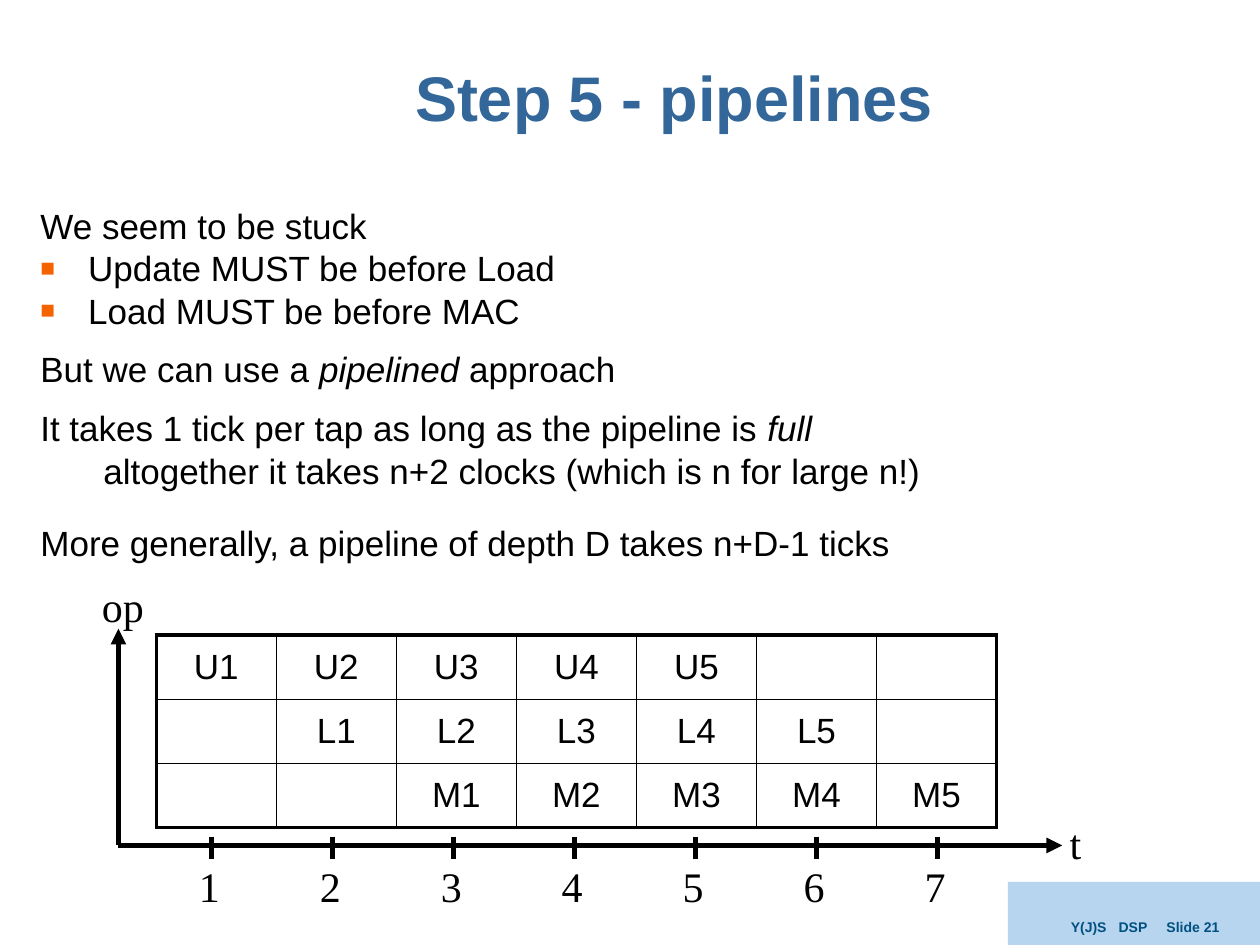
from lxml.etree import SubElement
from pptx import Presentation
from pptx.dml.color import RGBColor
from pptx.enum.shapes import MSO_CONNECTOR
from pptx.enum.text import MSO_ANCHOR, MSO_AUTO_SIZE, PP_ALIGN
from pptx.oxml import parse_xml
from pptx.oxml.ns import nsdecls, qn
from pptx.util import Inches, Pt

COLORS = {"title": "336699", "text": "000000", "bullet": "F46300",
          "tab": "B7D5EF", "footer": "005081"}
SANS, SERIF = "Arial", "Times New Roman"

OPS, TAPS = "ULM", 5
COLS, ROWS = TAPS + len(OPS) - 1, len(OPS)
GRID_X, GRID_Y, GRID_W, GRID_H = 1.24, 5.04, 6.67, 1.53
AXIS_X, AXIS_Y = 0.94, 6.71
TICK_X, TICK_STEP, TICK_H = 1.68, 0.96, 0.18

# Runs of each body paragraph (italic marked by *), space before, and kind
BODY = [
    (["We seem to be stuck"], 7, "plain"),
    (["Update MUST be before Load"], 5, "bullet"),
    (["Load MUST be before MAC"], 5, "bullet"),
    (["But we can use a ", "*pipelined", " approach"], 9.6, "plain"),
    (["It takes 1 tick per tap as long as the pipeline is ", "*full"], 9.6, "plain"),
    (["altogether it takes n+2 clocks (which is n for large n!)"], 5, "sub"),
    (["More generally, a pipeline of depth D takes n+D-1 ticks"], 17.6, "plain"),
]


def rgb(name):
    return RGBColor.from_string(COLORS[name])


def box(*lengths):
    return [Inches(v) for v in lengths]


def add_text(p, text, font=SANS, size=20, color="text", bold=False,
             italic=False, align=None):
    """Append a formatted run to paragraph p."""
    r = p.add_run()
    r.text = text
    r.font.name, r.font.size = font, Pt(size)
    r.font.bold, r.font.italic = bold, italic
    r.font.color.rgb = rgb(color)
    if align is not None:
        p.alignment = align


def add_label(s, text, x, y, w, h=0.5, **fmt):
    tf = s.shapes.add_textbox(*box(x, y, w, h)).text_frame
    tf.word_wrap = True
    add_text(tf.paragraphs[0], text, **fmt)
    return tf


def add_line(s, x1, y1, x2, y2, arrow=False):
    line = s.shapes.add_connector(MSO_CONNECTOR.STRAIGHT, *box(x1, y1, x2, y2))
    line.line.color.rgb, line.line.width = rgb("text"), Pt(3)
    if arrow:
        SubElement(line.line._get_or_add_ln(), qn("a:tailEnd"), type="triangle")
    SubElement(line._element.spPr, qn("a:effectLst"))


def place(sp, *lengths):
    sp.left, sp.top, sp.width, sp.height = box(*lengths)
    tf = sp.text_frame
    tf.auto_size, tf.word_wrap = MSO_AUTO_SIZE.NONE, True
    return tf


def add_title(s):
    tf = place(s.shapes.title, 0.99, 0.18, 8.72, 1.25)
    tf.vertical_anchor = MSO_ANCHOR.MIDDLE
    p = tf.paragraphs[0]
    p.line_spacing = 0.9
    add_text(p, "Step 5 - pipelines", size=36, color="title", bold=True,
             align=PP_ALIGN.CENTER)


def set_bullet(p, kind):
    """Set the indents and the square bullet, or none, of a body paragraph."""
    left, hang = (0.81, 0.31) if kind == "sub" else (0.38, 0.38)
    pPr = p._p.get_or_add_pPr()
    pPr.set("marL", str(Inches(left)))
    pPr.set("indent", str(-Inches(hang)))
    if kind != "bullet":
        SubElement(pPr, qn("a:buNone"))
        return
    color = SubElement(pPr, qn("a:buClr"))
    SubElement(color, qn("a:srgbClr"), val=COLORS["bullet"])
    SubElement(pPr, qn("a:buSzPct"), val="70000")
    SubElement(pPr, qn("a:buFont"), typeface=SANS)
    SubElement(pPr, qn("a:buChar"), char="■")


def add_body(s):
    tf = place(s.placeholders[1], 0.22, 1.57, 9.03, 3.01)
    for i, (runs, before, kind) in enumerate(BODY):
        p = tf.add_paragraph() if i else tf.paragraphs[0]
        p.level = 1 if kind == "sub" else 0
        p.line_spacing = 1.0 if kind == "plain" else 0.8
        p.space_before = Pt(before)
        set_bullet(p, kind)
        for text in runs:
            add_text(p, text.lstrip("*"), italic=text.startswith("*"))


def set_borders(cell, row, col):
    """Draw thin inner borders and a thick outer frame."""
    outer = {"L": col == 0, "R": col == COLS - 1,
             "T": row == 0, "B": row == ROWS - 1}
    tcPr = cell._tc.get_or_add_tcPr()
    for i, (side, thick) in enumerate(outer.items()):
        tcPr.insert(i, parse_xml(
            f'<a:ln{side} {nsdecls("a")} w="{Pt(2.25 if thick else 1)}">'
            f'<a:solidFill><a:srgbClr val="{COLORS["text"]}"/></a:solidFill>'
            f'</a:ln{side}>'))


def add_schedule(s):
    """Each operation starts one tick after the operation above it."""
    table = s.shapes.add_table(ROWS, COLS,
                               *box(GRID_X, GRID_Y, GRID_W, GRID_H)).table
    table.first_row = table.horz_banding = False
    for row, op in enumerate(OPS):
        for col in range(COLS):
            cell = table.cell(row, col)
            cell.fill.background()
            cell.vertical_anchor = MSO_ANCHOR.MIDDLE
            set_borders(cell, row, col)
            tap = col - row + 1
            if 1 <= tap <= TAPS:
                add_text(cell.text_frame.paragraphs[0], f"{op}{tap}",
                         align=PP_ALIGN.CENTER)


def add_axes(s):
    fmt = {"font": SERIF, "size": 24}
    add_line(s, AXIS_X, AXIS_Y, 8.43, AXIS_Y, arrow=True)
    add_label(s, "t", 8.39, 6.44, 0.43, **fmt)
    add_line(s, AXIS_X, AXIS_Y, AXIS_X, 4.99, arrow=True)
    add_label(s, "op", 0.71, 4.56, 0.61, **fmt)
    for i in range(COLS):
        x = TICK_X + i * TICK_STEP
        add_line(s, x, AXIS_Y - 0.07, x, AXIS_Y - 0.07 + TICK_H)
        add_label(s, str(i + 1), x - 0.2, 6.78, 0.39, **fmt)


def add_footer(s):
    corner = [(8.39, 7.5), (8.39, 7.3), (8.42, 7.25), (8.46, 7.22),
              (8.51, 7.2), (8.55, 7.19), (10, 7.19)]
    fb = s.shapes.build_freeform(10, 7.5, scale=Inches(1))
    fb.add_line_segments(corner, close=True)
    sp = fb.convert_to_shape()
    sp.shadow.inherit = False
    sp.fill.solid()
    sp.fill.fore_color.rgb = rgb("tab")
    sp.line.fill.background()
    tf = add_label(s, "Y(J)S\tDSP\tSlide 21", 8.4, 7.24, 1.6, 0.26,
                   size=8, color="footer", bold=True)
    tabs = SubElement(tf.paragraphs[0]._p.get_or_add_pPr(), qn("a:tabLst"))
    for stop in (0.38, 0.76):
        SubElement(tabs, qn("a:tab"), pos=str(Inches(stop)), algn="l")


def main():
    prs = Presentation()
    prs.slide_width, prs.slide_height = box(10, 7.5)
    s = prs.slides.add_slide(prs.slide_layouts[1])
    add_footer(s)
    add_title(s)
    add_body(s)
    add_schedule(s)
    add_axes(s)
    prs.save("out.pptx")


if __name__ == "__main__":
    main()
